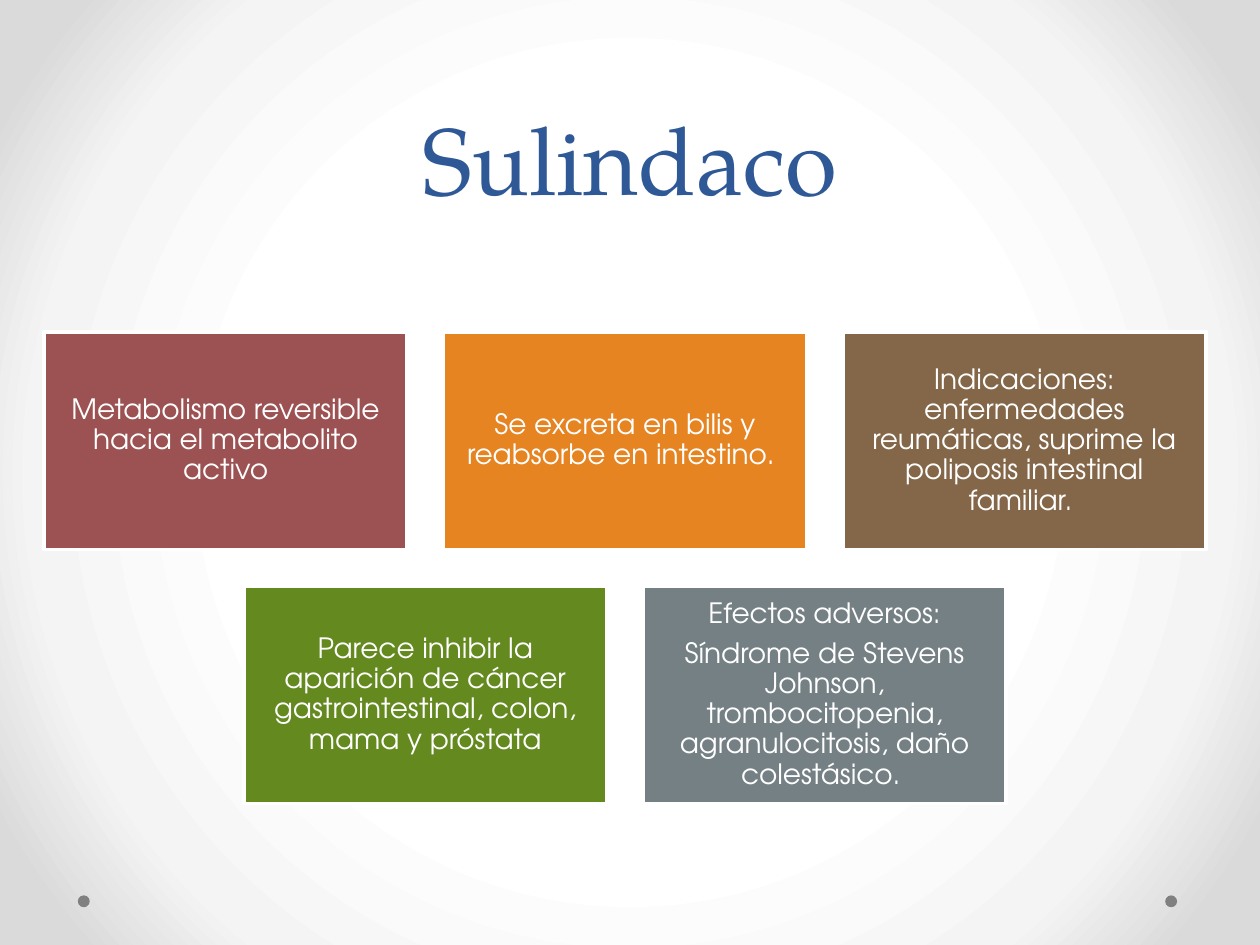
"""Build the Sulindaco slide with its centred grid of fact cards."""
from typing import NamedTuple

from pptx import Presentation
from pptx.dml.color import RGBColor
from pptx.enum.shapes import MSO_SHAPE
from pptx.enum.text import MSO_ANCHOR, MSO_AUTO_SIZE, PP_ALIGN
from pptx.oxml import parse_xml
from pptx.oxml.ns import nsdecls, qn
from pptx.shapes.autoshape import Shape
from pptx.slide import Slide
from pptx.util import Cm, Pt

WHITE = RGBColor(0xFF, 0xFF, 0xFF)
PALE = RGBColor(0xF4, 0xF4, 0xF4)
SILVER = RGBColor(0xDA, 0xDA, 0xDA)
GREY = RGBColor(0x80, 0x80, 0x80)
BLUE = RGBColor(0x2F, 0x58, 0x97)
RED = RGBColor(0x9C, 0x52, 0x52)
ORANGE = RGBColor(0xE6, 0x84, 0x22)
BROWN = RGBColor(0x84, 0x66, 0x48)
GREEN = RGBColor(0x63, 0x89, 0x1F)
SLATE = RGBColor(0x75, 0x80, 0x85)

WIDE, HIGH, GAP = 7.32, 4.39, 0.73
MID, TOP = 12.6, 6.69
DOT = 0.24

HEAD = {"size": Pt(54), "name": "TeX Gyre Pagella"}
BODY = {"size": Pt(16), "name": "TeX Gyre Adventor"}
LINES = {"alignment": PP_ALIGN.CENTER, "line_spacing": 0.9, "space_after": Pt(5.6)}
FRAME = {
    "word_wrap": True,
    "vertical_anchor": MSO_ANCHOR.MIDDLE,
    **{f"margin_{side}": Cm(0.18) for side in ("left", "top", "right", "bottom")},
}
STOPS = {50: WHITE, 76: PALE, 92: SILVER}


class Card(NamedTuple):
    color: RGBColor
    text: str


ROWS = [
    [
        Card(RED, "Metabolismo reversible hacia el metabolito activo"),
        Card(ORANGE, "Se excreta en bilis y reabsorbe en intestino. "),
        Card(BROWN, "Indicaciones: enfermedades reumáticas, suprime la "
                    "poliposis intestinal familiar. "),
    ],
    [
        Card(GREEN, "Parece inhibir la aparición de cáncer gastrointestinal, "
                    "colon, mama y próstata"),
        Card(SLATE, "Efectos adversos:\nSíndrome de Stevens Johnson, "
                    "trombocitopenia, agranulocitosis, daño colestásico. "),
    ],
]


def apply(target: object, style: dict) -> None:
    for key, value in style.items():
        setattr(target, key, value)


def style_text(shape: Shape, frame: dict, lines: dict, font: dict, color: RGBColor) -> None:
    apply(shape.text_frame, frame)
    for para in shape.text_frame.paragraphs:
        apply(para, lines)
        apply(para.font, font)
        para.font.color.rgb = color


def add_solid(slide: Slide, kind: MSO_SHAPE, box: tuple, color: RGBColor) -> Shape:
    shape = slide.shapes.add_shape(kind, *map(Cm, box))
    shape.shadow.inherit = False
    shape.fill.solid()
    shape.fill.fore_color.rgb = color
    shape.line.fill.background()
    return shape


def add_card(slide: Slide, card: Card, left: float, top: float) -> None:
    shape = add_solid(slide, MSO_SHAPE.RECTANGLE, (left, top, WIDE, HIGH), card.color)
    shape.line.color.rgb = WHITE
    shape.line.width = Pt(2.25)
    shape.text_frame.text = card.text
    style_text(shape, FRAME, LINES, BODY, WHITE)


def add_glow(slide: Slide) -> None:
    slide.background.fill.gradient()
    old = next(slide.element.iter(qn("a:gradFill")))
    stops = "".join(
        f'<a:gs pos="{pos * 1000}"><a:srgbClr val="{color}"/></a:gs>'
        for pos, color in STOPS.items()
    )
    new = parse_xml(
        f'<a:gradFill {nsdecls("a")} rotWithShape="1"><a:gsLst>{stops}</a:gsLst>'
        '<a:path path="circle"><a:fillToRect l="50000" t="50000" r="50000" b="50000"/>'
        "</a:path></a:gradFill>"
    )
    old.getparent().replace(old, new)


def add_title(slide: Slide) -> None:
    title = slide.shapes.title
    place = {"left": Cm(1.27), "top": Cm(0), "width": Cm(22.86), "height": Cm(4.45)}
    apply(title, place)
    title.text_frame.text = "Sulindaco"
    frame = {"vertical_anchor": MSO_ANCHOR.BOTTOM, "auto_size": MSO_AUTO_SIZE.NONE}
    lines = {"alignment": PP_ALIGN.CENTER, "line_spacing": Pt(58)}
    style_text(title, frame, lines, HEAD, BLUE)


def main() -> None:
    deck = Presentation()
    apply(deck, {"slide_width": Cm(25.4), "slide_height": Cm(19.05)})
    slide = deck.slides.add_slide(deck.slide_layouts[5])
    add_glow(slide)
    add_title(slide)
    for left in (1.57, 23.49):
        add_solid(slide, MSO_SHAPE.OVAL, (left, 18.05, DOT, DOT), GREY)
    for row, cards in enumerate(ROWS):
        start = MID - (len(cards) * (WIDE + GAP) - GAP) / 2
        for col, card in enumerate(cards):
            add_card(slide, card, start + col * (WIDE + GAP), TOP + row * (HIGH + GAP))
    deck.save("out.pptx")


if __name__ == "__main__":
    main()
